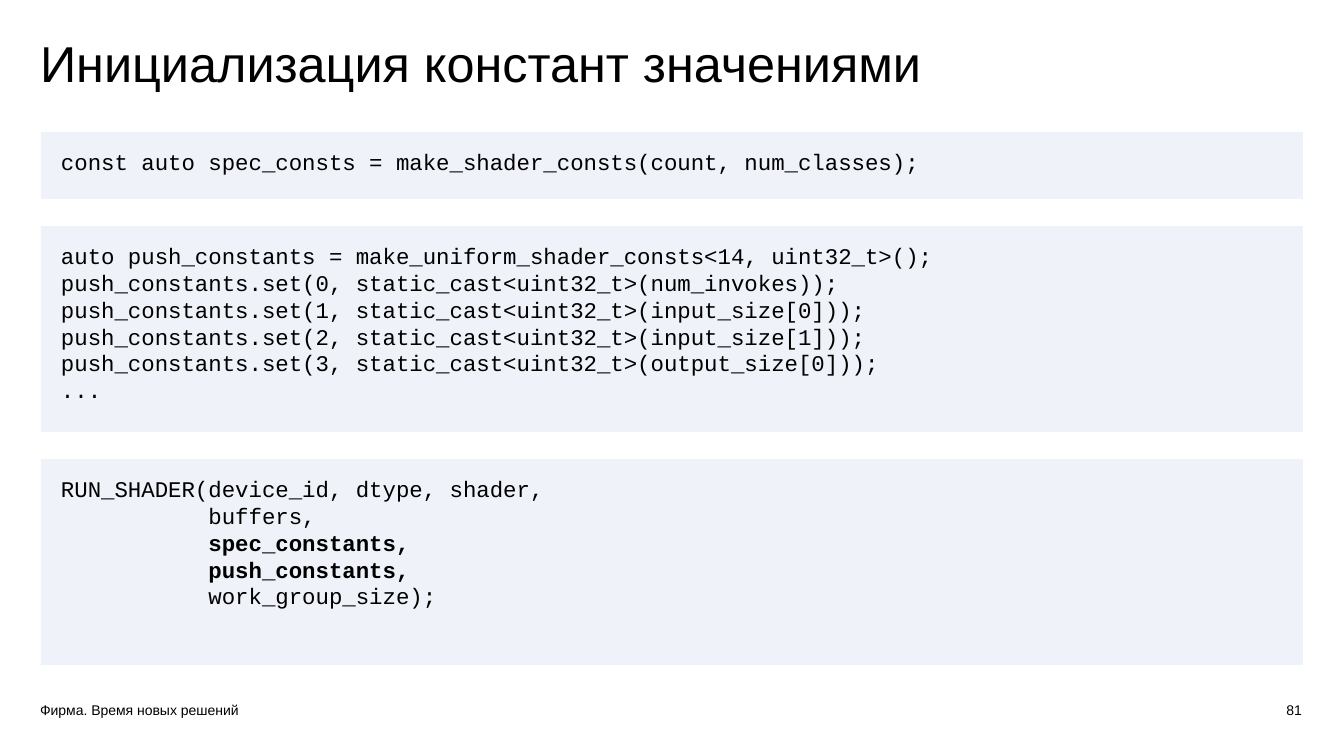
"""Build the slide on initialising shader constants with values."""
from pptx import Presentation
from pptx.dml.color import RGBColor
from pptx.enum.shapes import MSO_SHAPE
from pptx.enum.text import MSO_ANCHOR, MSO_AUTO_SIZE, PP_ALIGN
from pptx.util import Pt

PX = 12192000 // 1344
BLACK = RGBColor(0x00, 0x00, 0x00)
PALE_BLUE = RGBColor(0xEF, 0xF2, 0xF9)
PANEL_LEFT, PANEL_WIDTH, PANEL_GAP = 41, 1262, 27


def px(*lengths):
    return [length * PX for length in lengths]


def fill_text(shape, text, font_name, size, insets, align=PP_ALIGN.LEFT):
    frame = shape.text_frame
    frame.text = text
    frame.word_wrap = True
    frame.auto_size = MSO_AUTO_SIZE.NONE
    frame.vertical_anchor = MSO_ANCHOR.TOP
    (frame.margin_left, frame.margin_top,
     frame.margin_right, frame.margin_bottom) = px(*insets)
    for paragraph in frame.paragraphs:
        paragraph.alignment = align
        for run in paragraph.runs:
            run.font.name = font_name
            run.font.size = Pt(size)
            run.font.color.rgb = BLACK
            run.font.bold = run.text.strip() in BOLD_LINES


BOLD_LINES = ("spec_constants,", "push_constants,")
CODE_PANELS = [
    (67, """const auto spec_consts = make_shader_consts(count, num_classes);"""),
    (206, """auto push_constants = make_uniform_shader_consts<14, uint32_t>();
push_constants.set(0, static_cast<uint32_t>(num_invokes));
push_constants.set(1, static_cast<uint32_t>(input_size[0]));
push_constants.set(2, static_cast<uint32_t>(input_size[1]));
push_constants.set(3, static_cast<uint32_t>(output_size[0]));
..."""),
    (206, """RUN_SHADER(device_id, dtype, shader,
           buffers,
           spec_constants,
           push_constants,
           work_group_size);"""),
]

deck = Presentation()
deck.slide_width, deck.slide_height = px(1344, 756)
slide = deck.slides.add_slide(deck.slide_layouts[5])

heading = slide.shapes.title
heading.left, heading.top, heading.width, heading.height = px(40, 34, 1099, 84)
fill_text(heading, "Инициализация констант значениями", "Arial", 36, (0, 5, 10, 5))
heading.text_frame.paragraphs[0].line_spacing = 0.9

panel_top = 132
for panel_height, code in CODE_PANELS:
    panel = slide.shapes.add_shape(
        MSO_SHAPE.RECTANGLE, *px(PANEL_LEFT, panel_top, PANEL_WIDTH, panel_height))
    panel.shadow.inherit = False
    panel.fill.solid()
    panel.fill.fore_color.rgb = PALE_BLUE
    panel.line.fill.background()
    fill_text(panel, code, "Courier New", 16, (20, 16, 20, 20))
    panel_top += panel_height + PANEL_GAP

motto = slide.shapes.add_textbox(*px(30, 697, 300, 27))
fill_text(motto, "Фирма. Время новых решений", "Arial", 10, (10, 5, 10, 5))

page_number = slide.shapes.add_textbox(*px(969, 697, 333, 40))
fill_text(page_number, "81", "Arial", 10, (10, 5, 0, 5), PP_ALIGN.RIGHT)

deck.save("out.pptx")
